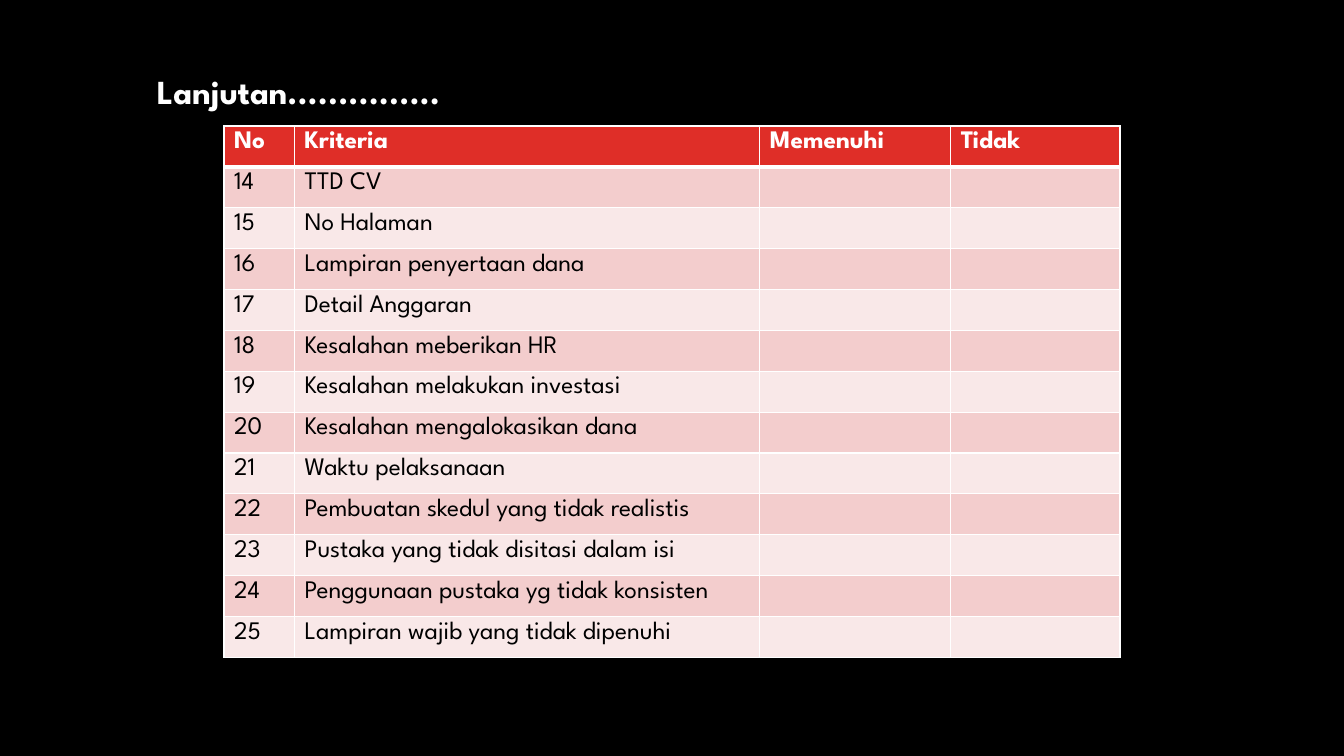
from lxml.etree import SubElement
from pptx import Presentation
from pptx.dml.color import RGBColor
from pptx.enum.text import MSO_AUTO_SIZE
from pptx.oxml import parse_xml
from pptx.oxml.ns import nsdecls
from pptx.util import Pt

TITLE = "Lanjutan..............."
HEADINGS = ["No", "Kriteria", "Memenuhi", "Tidak"]
FIRST_NUMBER = 14
CRITERIA = [
    "TTD CV",
    "No Halaman",
    "Lampiran penyertaan dana",
    "Detail Anggaran",
    "Kesalahan meberikan HR",
    "Kesalahan melakukan investasi",
    "Kesalahan mengalokasikan dana",
    "Waktu pelaksanaan",
    "Pembuatan skedul yang tidak realistis",
    "Pustaka yang tidak disitasi dalam isi",
    "Penggunaan pustaka yg tidak konsisten",
    "Lampiran wajib yang tidak dipenuhi",
]
COLORS = {
    "background": "000000",
    "heading": "DF2E28",
    "odd": "F3CDCD",
    "even": "F9E8E8",
    "light": "FFFFFF",
    "dark": "000000",
}
FONT = "League Spartan"
TITLE_FORMAT = {"name": FONT, "size": Pt(24), "bold": True}
HEADING_FORMAT = {"name": FONT, "size": Pt(18), "bold": True}
CRITERION_FORMAT = {"name": FONT, "size": Pt(18), "bold": False}
COLUMN_WIDTHS = [50.4, 332.4, 136.4, 120.9]
ROW_HEIGHT = 29.2
TABLE_LEFT, TABLE_TOP = 160, 90


def write(paragraph, text, values, color):
    run = paragraph.add_run()
    run.text = text
    for key, value in values.items():
        setattr(run.font, key, value)
    run.font.color.rgb = RGBColor.from_string(COLORS[color])


def add_borders(cell, widths):
    properties = cell._tc.get_or_add_tcPr()
    for index, (side, width) in enumerate(widths.items()):
        border = parse_xml(
            f'<a:ln{side} {nsdecls("a")} w="{Pt(width)}"><a:solidFill>'
            f'<a:srgbClr val="{COLORS["light"]}"/></a:solidFill></a:ln{side}>'
        )
        properties.insert(index, border)


def main():
    presentation = Presentation()
    presentation.slide_width, presentation.slide_height = Pt(960), Pt(540)
    slide = presentation.slides.add_slide(presentation.slide_layouts[6])
    slide.background.fill.solid()
    slide.background.fill.fore_color.rgb = RGBColor.from_string(COLORS["background"])

    title = slide.shapes.add_textbox(Pt(105), Pt(46.8), Pt(216.7), Pt(36)).text_frame
    title.word_wrap = False
    title.auto_size = MSO_AUTO_SIZE.SHAPE_TO_FIT_TEXT
    write(title.paragraphs[0], TITLE, TITLE_FORMAT, "light")

    rows = [HEADINGS] + [
        [str(number), criterion, "", ""]
        for number, criterion in enumerate(CRITERIA, FIRST_NUMBER)
    ]
    checklist = slide.shapes.add_table(
        len(rows), len(HEADINGS), Pt(TABLE_LEFT), Pt(TABLE_TOP),
        Pt(sum(COLUMN_WIDTHS)), Pt(ROW_HEIGHT * len(rows)),
    ).table
    for column, width in zip(checklist.columns, COLUMN_WIDTHS):
        column.width = Pt(width)
    for r, texts in enumerate(rows):
        checklist.rows[r].height = Pt(ROW_HEIGHT)
        fill = "heading" if r == 0 else "odd" if r % 2 else "even"
        values, color = (CRITERION_FORMAT, "dark") if r else (HEADING_FORMAT, "light")
        borders = {"L": 1, "R": 1, "T": 3 if r == 1 else 1, "B": 1 if r else 3}
        for c, text in enumerate(texts):
            cell = checklist.cell(r, c)
            cell.fill.solid()
            cell.fill.fore_color.rgb = RGBColor.from_string(COLORS[fill])
            add_borders(cell, borders)
            if text:
                write(cell.text_frame.paragraphs[0], text, values, color)

    presentation.save("out.pptx")


if __name__ == "__main__":
    main()
